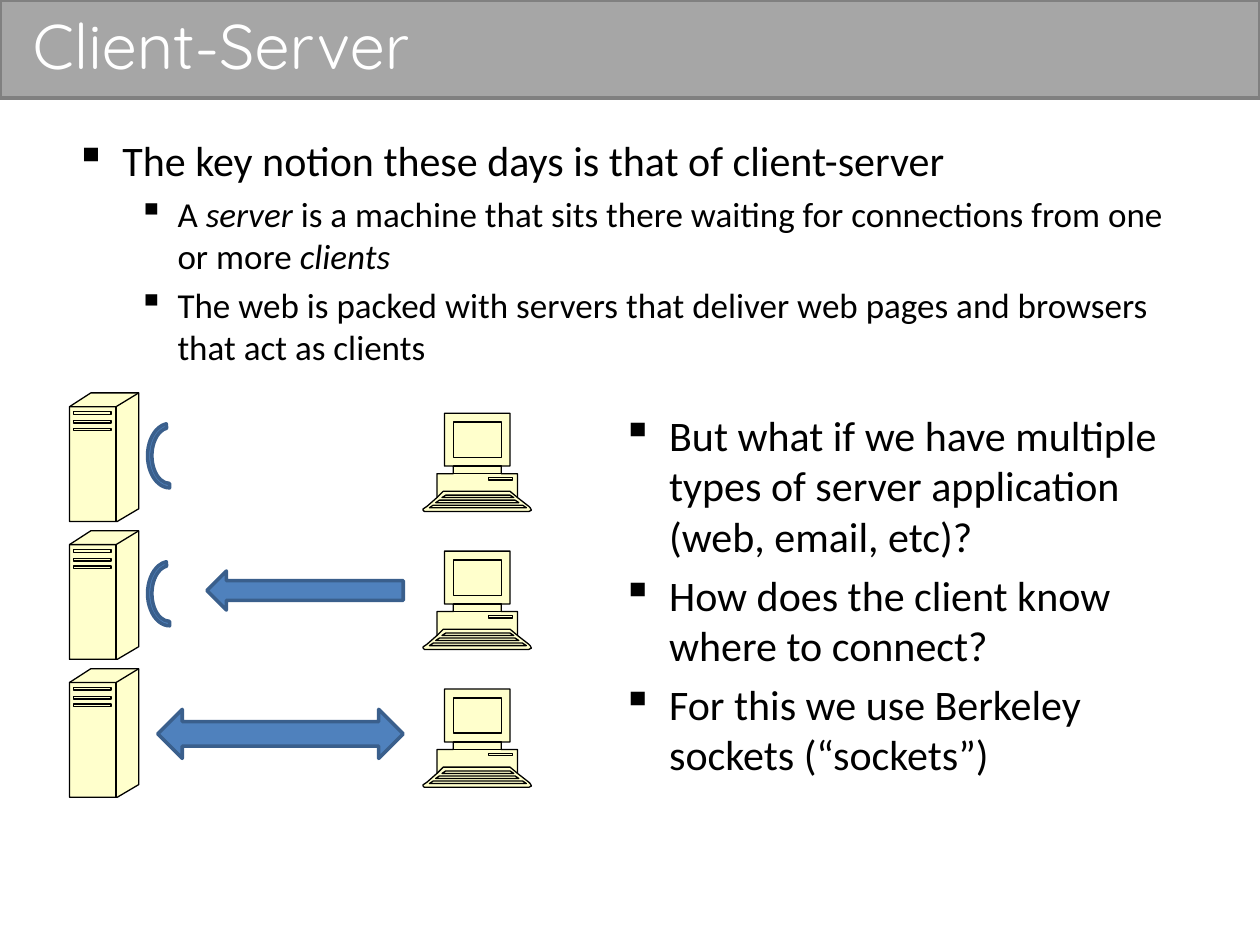
from lxml.etree import SubElement
from pptx import Presentation
from pptx.dml.color import RGBColor
from pptx.enum.shapes import MSO_SHAPE as Shape
from pptx.enum.text import MSO_ANCHOR as Anchor
from pptx.oxml.ns import qn
from pptx.util import Cm, Pt

UNIT = Cm(0.0254)  # grid on which the icons are drawn
STEP = 2.78  # distance between the rows, in cm
BLUE = ("4F81BD", "3A5F8C", 2)
CREAM = ("FFFFCC", "000000", 0.75)
HOLLOW = (None, "000000", 0.75)

# level: size, text indent (cm), hanging indent (cm), space before
LEVELS = [(24, 0.95, 0.95, 4.8), (20, 2.06, 0.79, 4)]

KEY_POINTS = [
    (0, "The key notion these days is that of client-server"),
    (1, "A *server* is a machine that sits there waiting for connections "
        "from one or more *clients*"),
    (1, "The web is packed with servers that deliver web pages and browsers "
        "that act as clients"),
]
QUESTIONS = [
    (0, "But what if we have multiple types of server application "
        "(web, email, etc)?"),
    (0, "How does the client know where to connect?"),
    (0, "For this we use Berkeley sockets (“sockets”)"),
]


def color(code):
    return RGBColor.from_string(code)


def box(x, y, w, h):
    return Cm(x), Cm(y), Cm(w), Cm(h)


def paint(shape, look):
    fill, line, width = look
    shape.shadow.inherit = False
    if fill:
        shape.fill.solid()
        shape.fill.fore_color.rgb = color(fill)
    else:
        shape.fill.background()
    shape.line.color.rgb = color(line)
    shape.line.width = Pt(width)


def preset(slide, kind, area, look, turn=0, adjust=()):
    shape = slide.shapes.add_shape(kind, *box(*area))
    paint(shape, look)
    shape.rotation = turn
    for i, value in enumerate(adjust):
        shape.adjustments[i] = value


def rect(x1, y1, x2, y2):
    return [(x1, y1), (x2, y1), (x2, y2), (x1, y2), (x1, y1)]


def strip(y, left, right, slant):
    """Closed row of keys, wider at the bottom."""
    return [(right, y), (right - slant, y - 2), (left + slant, y - 2),
            (left, y), (right, y)]


def trace(slide, x, y, lines, look):
    """Draw all lines as one freeform, placed from the icon's corner."""
    pen = slide.shapes.build_freeform(*lines[0][0], scale=UNIT)
    for i, line in enumerate(lines):
        if i:
            pen.move_to(*line[0])
        pen.add_line_segments(line[1:], close=False)
    paint(pen.convert_to_shape(Cm(x), Cm(y)), look)


def server(slide, x, y):
    case = [(0, 11), (17, 0), (55, 0), (55, 92), (38, 102), (0, 102), (0, 11)]
    edges = [[(0, 11), (37, 11), (55, 0)], [(37, 11), (37, 102)]]
    slots = [rect(3, top, 33, top + 2) for top in (15, 22, 28)]
    trace(slide, x, y, [case], CREAM)
    trace(slide, x, y, edges + slots, HOLLOW)


def client(slide, x, y):
    case = [(84, 74), (75, 67), (75, 48), (62, 48), (62, 42), (69, 42),
            (69, 0), (17, 0), (17, 42), (24, 42), (24, 48), (11, 48),
            (11, 67), (3, 74), (0, 76), (0, 77), (1, 78), (3, 78),
            (84, 78), (86, 77), (85, 75), (84, 74)]
    keys = [strip(67, 15, 72, 3), strip(71, 10, 76, 3), strip(75, 5, 82, 3)]
    board = [(75, 67), (69, 62), (16, 62), (11, 67)]
    drive, screen, neck = (rect(52, 51, 71, 53), rect(24, 7, 62, 35),
                           rect(24, 42, 62, 48))
    trace(slide, x, y, [case], CREAM)
    trace(slide, x, y, keys + [board, drive, screen, neck], HOLLOW)


def frame(slide, area, anchor=Anchor.TOP):
    text = slide.shapes.add_textbox(*box(*area)).text_frame
    text.word_wrap = True
    text.vertical_anchor = anchor
    return text


def write(para, words, **form):
    run = para.add_run()
    run.text = words
    code = form.pop("color")
    for name, value in form.items():
        setattr(run.font, name, value)
    run.font.color.rgb = color(code)


def title(slide, words):
    text = frame(slide, (0.41, 0, 24.21, 1.78), Anchor.MIDDLE)
    write(text.paragraphs[0], words, name="Quicksand", size=Pt(36),
          color="FFFFFF")


def bullets(slide, area, items):
    """Write (level, words) items; words between asterisks are italic."""
    text = frame(slide, area)
    for i, (level, words) in enumerate(items):
        para = text.add_paragraph() if i else text.paragraphs[0]
        size, left, hang, before = LEVELS[level]
        para.level = level
        para.space_before = Pt(before)
        props = para._p.get_or_add_pPr()
        props.set("marL", str(Cm(left)))
        props.set("indent", str(-Cm(hang)))
        SubElement(props, qn("a:buChar")).set("char", "▪")
        for j, part in enumerate(words.split("*")):
            if part:
                write(para, part, name="Calibri", size=Pt(size),
                      italic=j % 2 == 1, color="000000")


def main():
    deck = Presentation()
    deck.slide_width, deck.slide_height = Cm(25.4), Cm(19.05)
    slide = deck.slides.add_slide(deck.slide_layouts[6])

    preset(slide, Shape.RECTANGLE, (0, 0, 25.4, 1.98), ("A6A6A6", "808080", 2))
    title(slide, "Client-Server")
    bullets(slide, (1.27, 2.59, 22.86, 6.93), KEY_POINTS)
    bullets(slide, (12.29, 8.13, 11.91, 11.3), QUESTIONS)

    for row in range(3):
        server(slide, 1.4, 7.92 + row * STEP)
        client(slide, 8.53, 8.33 + row * STEP)
    for row in range(2):
        preset(slide, Shape.BLOCK_ARC, (2.77, 8.74 + row * STEP, 1.3, 0.89),
               BLUE, 270, (108, 212.39, 0.1))
    preset(slide, Shape.LEFT_ARROW, (4.17, 11.51, 3.96, 0.79), BLUE)
    preset(slide, Shape.LEFT_RIGHT_ARROW, (3.18, 14.3, 4.95, 0.99), BLUE)

    deck.save("out.pptx")


if __name__ == "__main__":
    main()
